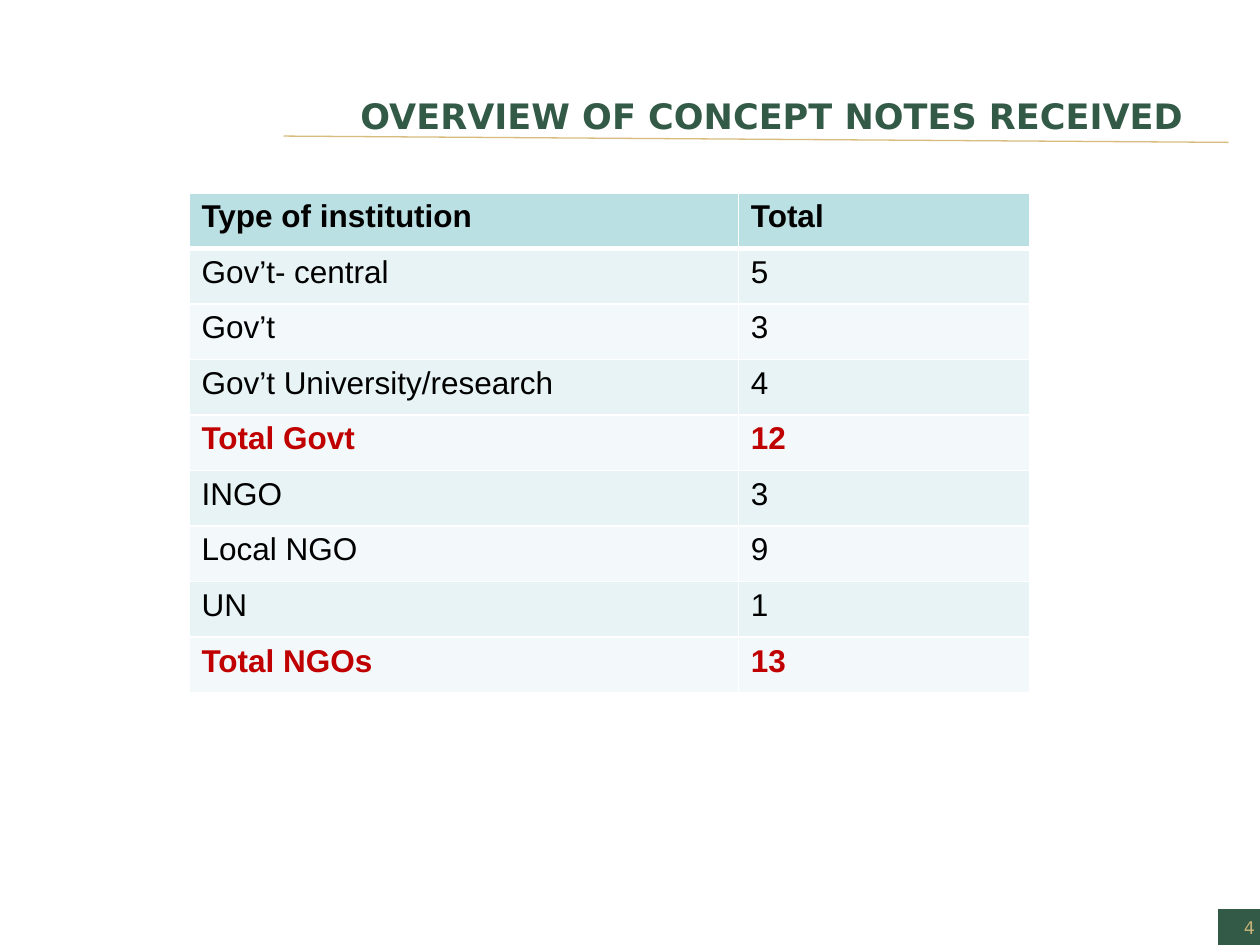
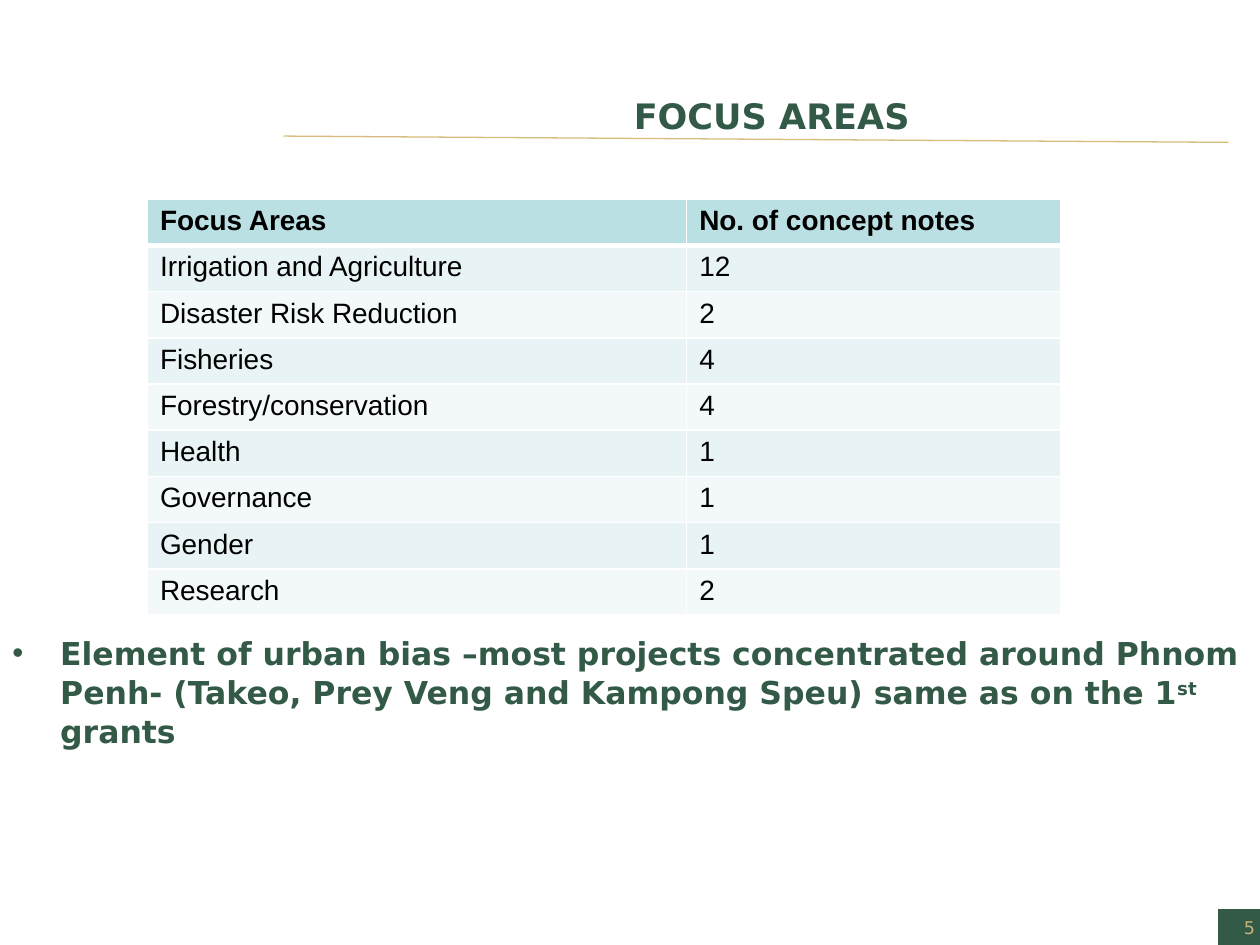
from dataclasses import dataclass

from lxml.etree import SubElement
from pptx import Presentation
from pptx.dml.color import RGBColor
from pptx.enum.shapes import MSO_CONNECTOR, MSO_SHAPE
from pptx.enum.text import MSO_ANCHOR, PP_ALIGN
from pptx.oxml.ns import qn
from pptx.util import Inches, Pt

GREEN = "325A46"
GOLD_LINE = "D8BC7E"
GOLD_TEXT = "C8B478"
BLACK = "000000"
RED = "C00000"
WHITE = "FFFFFF"
HEADER_FILL = "BBE0E3"
BAND_FILLS = ("E7F3F4", "F3F9FA")
HEADING_FONT = "DejaVu Sans"
TABLE_FONT = "Arial"


@dataclass(frozen=True)
class CountTable:
    left: float
    top: float
    height: float
    columns: tuple[float, float]
    size: int
    rows: tuple[tuple[str, str], ...]
    totals: tuple[str, ...] = ()


INSTITUTIONS = CountTable(
    1.5, 1.53, 3.97, (4.36, 2.31), 18,
    (
        ("Type of institution", "Total"),
        ("Gov’t- central", "5"),
        ("Gov’t", "3"),
        ("Gov’t University/research", "4"),
        ("Total Govt", "12"),
        ("INGO", "3"),
        ("Local NGO", "9"),
        ("UN", "1"),
        ("Total NGOs", "13"),
    ),
    totals=("Total Govt", "Total NGOs"),
)
FOCUS_AREAS = CountTable(
    1.17, 1.58, 3.3, (4.28, 2.97), 16,
    (
        ("Focus Areas", "No. of concept notes"),
        ("Irrigation and Agriculture", "12"),
        ("Disaster Risk Reduction", "2"),
        ("Fisheries", "4"),
        ("Forestry/conservation", "4"),
        ("Health", "1"),
        ("Governance", "1"),
        ("Gender", "1"),
        ("Research", "2"),
    ),
)


def rgb(color: str) -> RGBColor:
    return RGBColor.from_string(color)


def write(para, text: str, *, size: float, color: str, font: str = HEADING_FONT,
          bold: bool = False, align=None, baseline: int = 0) -> None:
    """Add one formatted span; baseline is a percentage shift."""
    if align is not None:
        para.alignment = align
    span = para.add_run()
    span.text = text
    span.font.size = Pt(size)
    span.font.name = font
    span.font.bold = bold
    span.font.color.rgb = rgb(color)
    if baseline:
        span.font._element.set("baseline", str(baseline * 1000))


def set_insets(frame, left: float, top: float, right: float, bottom: float) -> None:
    frame.margin_left, frame.margin_top = Inches(left), Inches(top)
    frame.margin_right, frame.margin_bottom = Inches(right), Inches(bottom)


def add_page(deck, title: str, number: int):
    """Add a slide with the shared title, rule and page number."""
    page = deck.slides.add_slide(deck.slide_layouts[5])

    rule = page.shapes.add_connector(
        MSO_CONNECTOR.STRAIGHT, Inches(2.25), Inches(1.08), Inches(9.75), Inches(1.13))
    rule.line.color.rgb = rgb(GOLD_LINE)
    rule.line.width = Pt(0.75)
    SubElement(rule._element.spPr, qn("a:effectLst"))

    heading = page.shapes.title
    heading.left, heading.top = Inches(2.25), Inches(0)
    heading.width, heading.height = Inches(7.75), Inches(1.08)
    frame = heading.text_frame
    frame.word_wrap = True
    frame.vertical_anchor = MSO_ANCHOR.BOTTOM
    set_insets(frame, 0.08, 0, 0.08, 0)
    write(frame.paragraphs[0], title, size=20, color=GREEN, bold=True,
          align=PP_ALIGN.CENTER)

    badge = page.shapes.add_shape(
        MSO_SHAPE.RECTANGLE, Inches(9.67), Inches(7.22), Inches(0.33), Inches(0.28))
    badge.shadow.inherit = False
    badge.fill.solid()
    badge.fill.fore_color.rgb = rgb(GREEN)
    badge.line.color.rgb = rgb(GREEN)
    badge.line.width = Pt(0.75)
    frame = badge.text_frame
    frame.vertical_anchor = MSO_ANCHOR.MIDDLE
    set_insets(frame, 0.02, 0.05, 0.04, 0.05)
    write(frame.paragraphs[0], str(number), size=10, color=GOLD_TEXT,
          align=PP_ALIGN.RIGHT)
    return page


def add_borders(cell, top: float, bottom: float) -> None:
    properties = cell._tc.get_or_add_tcPr()
    for side, width in (("L", 1), ("R", 1), ("T", top), ("B", bottom)):
        border = SubElement(properties, qn(f"a:ln{side}"), w=str(Pt(width)))
        fill = SubElement(border, qn("a:solidFill"))
        SubElement(fill, qn("a:srgbClr"), val=WHITE)


def add_count_table(page, spec_table: CountTable) -> None:
    rows = spec_table.rows
    table = page.shapes.add_table(
        len(rows), len(spec_table.columns), Inches(spec_table.left),
        Inches(spec_table.top), Inches(sum(spec_table.columns)),
        Inches(spec_table.height)).table
    for column, width in zip(table.columns, spec_table.columns):
        column.width = Inches(width)
    for row_index, texts in enumerate(rows):
        is_header = row_index == 0
        is_total = texts[0] in spec_table.totals
        fill = HEADER_FILL if is_header else BAND_FILLS[(row_index - 1) % 2]
        for column_index, text in enumerate(texts):
            cell = table.cell(row_index, column_index)
            add_borders(cell, top=3 if row_index == 1 else 1,
                        bottom=3 if is_header else 1)
            cell.fill.solid()
            cell.fill.fore_color.rgb = rgb(fill)
            write(cell.text_frame.paragraphs[0], text, size=spec_table.size,
                  font=TABLE_FONT, color=RED if is_total else BLACK,
                  bold=is_header or is_total)


def add_urban_bias_note(page) -> None:
    box = page.shapes.add_textbox(Inches(0), Inches(4.97), Inches(10), Inches(1.05))
    box.text_frame.word_wrap = True
    para = box.text_frame.paragraphs[0]
    para.line_spacing = 1.04
    properties = para._p.get_or_add_pPr()
    properties.set("marL", str(Inches(0.38)))
    properties.set("indent", str(-Inches(0.38)))
    SubElement(properties, qn("a:buFont"), typeface=TABLE_FONT)
    SubElement(properties, qn("a:buChar"), char="•")
    for text, baseline in (
        ("Element of urban bias –most projects concentrated around Phnom Penh- "
         "(Takeo, Prey Veng and Kampong Speu) same as on the 1", 0),
        ("st", 30),
        (" grants", 0),
    ):
        write(para, text, size=18, color=GREEN, bold=True, baseline=baseline)


def main() -> None:
    deck = Presentation()
    deck.slide_width, deck.slide_height = Inches(10), Inches(7.5)

    overview = add_page(deck, "OVERVIEW OF CONCEPT NOTES RECEIVED", 4)
    add_count_table(overview, INSTITUTIONS)

    focus = add_page(deck, "FOCUS AREAS", 5)
    add_urban_bias_note(focus)
    add_count_table(focus, FOCUS_AREAS)

    deck.save("out.pptx")


if __name__ == "__main__":
    main()
